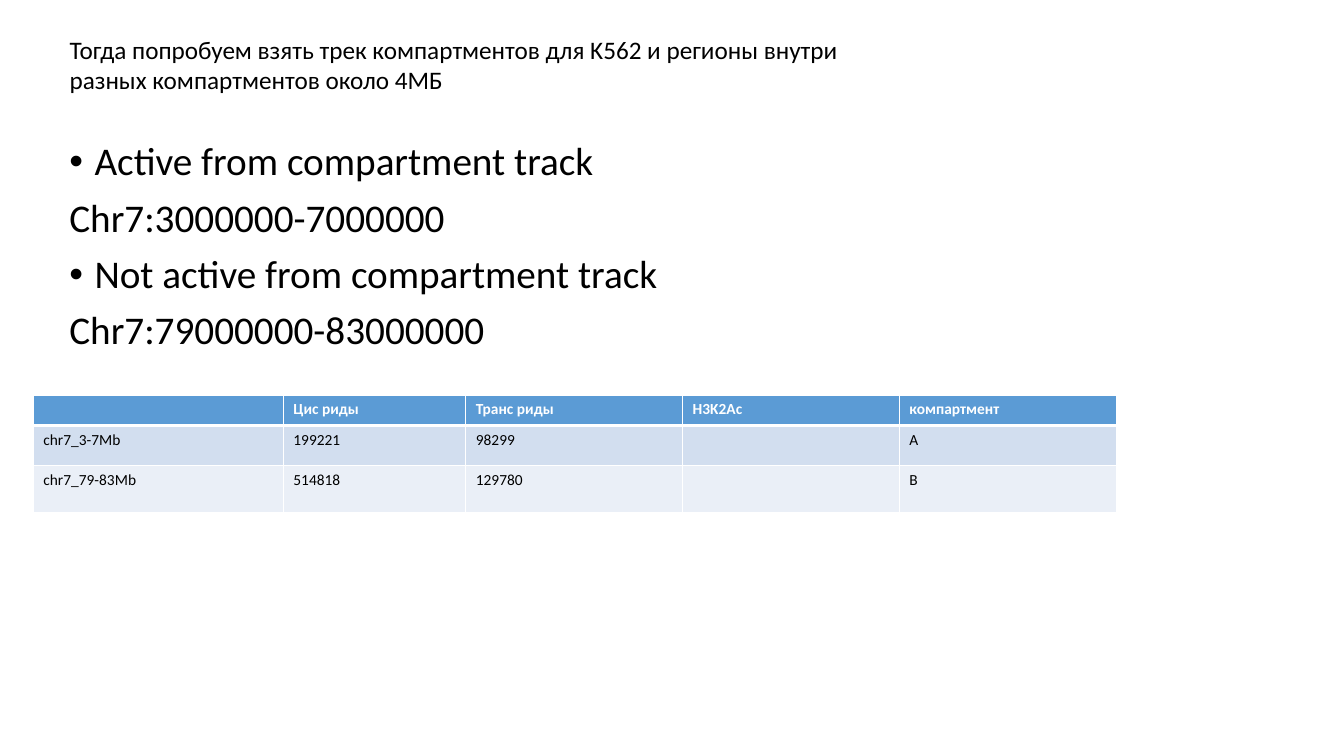
import dataclasses

import lxml.etree
import pptx
import pptx.dml.color
import pptx.enum.text
import pptx.oxml.ns
import pptx.util

Inches = pptx.util.Inches
Pt = pptx.util.Pt
qn = pptx.oxml.ns.qn


@dataclasses.dataclass(frozen=True)
class Theme:
    font: str = "Calibri"
    text: str = "000000"
    light: str = "FFFFFF"
    header: str = "5B9BD5"
    bands: tuple = ("D2DEEF", "EAEFF7")
    title_size: int = 18
    body_size: int = 28
    table_size: int = 11
    rule: int = 1
    header_rule: int = 3


def rgb(value):
    return pptx.dml.color.RGBColor.from_string(value)


def write(p, text, *, font, size, color, bold=False):
    """Fill a paragraph; an empty one only keeps the size for its line height."""
    if not text:
        end = lxml.etree.SubElement(p._p, qn("a:endParaRPr"))
        end.set("sz", str(size * 100))
        return
    r = p.add_run()
    r.text = text
    r.font.name = font
    r.font.size = Pt(size)
    r.font.bold = bold
    r.font.color.rgb = rgb(color)


def add_bullet(p, indent):
    pPr = p._p.get_or_add_pPr()
    pPr.set("marL", str(indent))
    pPr.set("indent", str(-indent))
    lxml.etree.SubElement(pPr, qn("a:buFont")).set("typeface", "Arial")
    lxml.etree.SubElement(pPr, qn("a:buChar")).set("char", "•")


def add_border(cell, side, width, color):
    tcPr = cell._tc.get_or_add_tcPr()
    ln = lxml.etree.SubElement(tcPr, qn(f"a:ln{side}"), w=str(Pt(width)))
    fill = lxml.etree.SubElement(ln, qn("a:solidFill"))
    lxml.etree.SubElement(fill, qn("a:srgbClr"), val=color)


class SlideBuilder:
    def __init__(self, prs, theme):
        self.theme = theme
        self.s = prs.slides.add_slide(prs.slide_layouts[5])

    def title(self, text, left, top, width, height):
        sp = self.s.shapes.title
        sp.left, sp.top = Inches(left), Inches(top)
        sp.width, sp.height = Inches(width), Inches(height)
        tf = sp.text_frame
        tf.word_wrap = True
        tf.auto_size = pptx.enum.text.MSO_AUTO_SIZE.SHAPE_TO_FIT_TEXT
        tf.vertical_anchor = pptx.enum.text.MSO_ANCHOR.TOP
        p = tf.paragraphs[0]
        p.alignment = pptx.enum.text.PP_ALIGN.LEFT
        write(p, text, font=self.theme.font, size=self.theme.title_size,
              color=self.theme.text)

    def body(self, regions, left, top, width, height):
        """List each region's label as a bullet with its coordinates below."""
        sp = self.s.shapes.add_textbox(Inches(left), Inches(top),
                                       Inches(width), Inches(height))
        tf = sp.text_frame
        tf.word_wrap = True
        lines = [(text, i == 0) for region in regions
                 for i, text in enumerate(region)]
        for i, (text, bulleted) in enumerate(lines):
            p = tf.add_paragraph() if i else tf.paragraphs[0]
            p.line_spacing = 0.9
            p.space_before = Pt(10)
            if bulleted:
                add_bullet(p, Inches(0.25))
            write(p, text, font=self.theme.font, size=self.theme.body_size,
                  color=self.theme.text)

    def table(self, rows, left, top, widths, heights):
        t = self.theme
        frame = self.s.shapes.add_table(
            len(rows), len(widths), Inches(left), Inches(top),
            Inches(sum(widths)), Inches(sum(heights)))
        table = frame.table
        for column, width in zip(table.columns, widths):
            column.width = Inches(width)
        for row, height in zip(table.rows, heights):
            row.height = Inches(height)
        for i, values in enumerate(rows):
            is_header = i == 0
            fill = t.header if is_header else t.bands[(i - 1) % 2]
            rules = {"L": t.rule, "R": t.rule,
                     "T": t.header_rule if i == 1 else t.rule,
                     "B": t.header_rule if is_header else t.rule}
            for j, text in enumerate(values):
                cell = table.cell(i, j)
                for side, width in rules.items():
                    add_border(cell, side, width, t.light)
                cell.fill.solid()
                cell.fill.fore_color.rgb = rgb(fill)
                write(cell.text_frame.paragraphs[0], text, font=t.font,
                      size=t.table_size, bold=is_header,
                      color=t.light if is_header else t.text)


def main():
    prs = pptx.Presentation()
    prs.slide_width, prs.slide_height = Inches(13.33), Inches(7.5)
    slide = SlideBuilder(prs, Theme())
    slide.body([
        ("Active from compartment track", "Chr7:3000000-7000000"),
        ("Not active from compartment track", "Chr7:79000000-83000000"),
    ], 0.59, 1.36, 11.5, 4.76)
    slide.title("Тогда попробуем взять трек компартментов для K562 и регионы "
                "внутри разных компартментов около 4МБ", 0.59, 0.29, 8.04, 0.71)
    slide.table([
        ("", "Цис риды", "Транс риды", "H3K2Ac", "компартмент"),
        ("chr7_3-7Mb", "199221", "98299", "", "A"),
        ("chr7_79-83Mb", "514818", "129780", "", "B"),
    ], 0.33, 3.92, widths=(2.48, 1.81, 2.15, 2.15, 2.15),
        heights=(0.3, 0.4, 0.47))
    prs.save("out.pptx")


if __name__ == "__main__":
    main()
